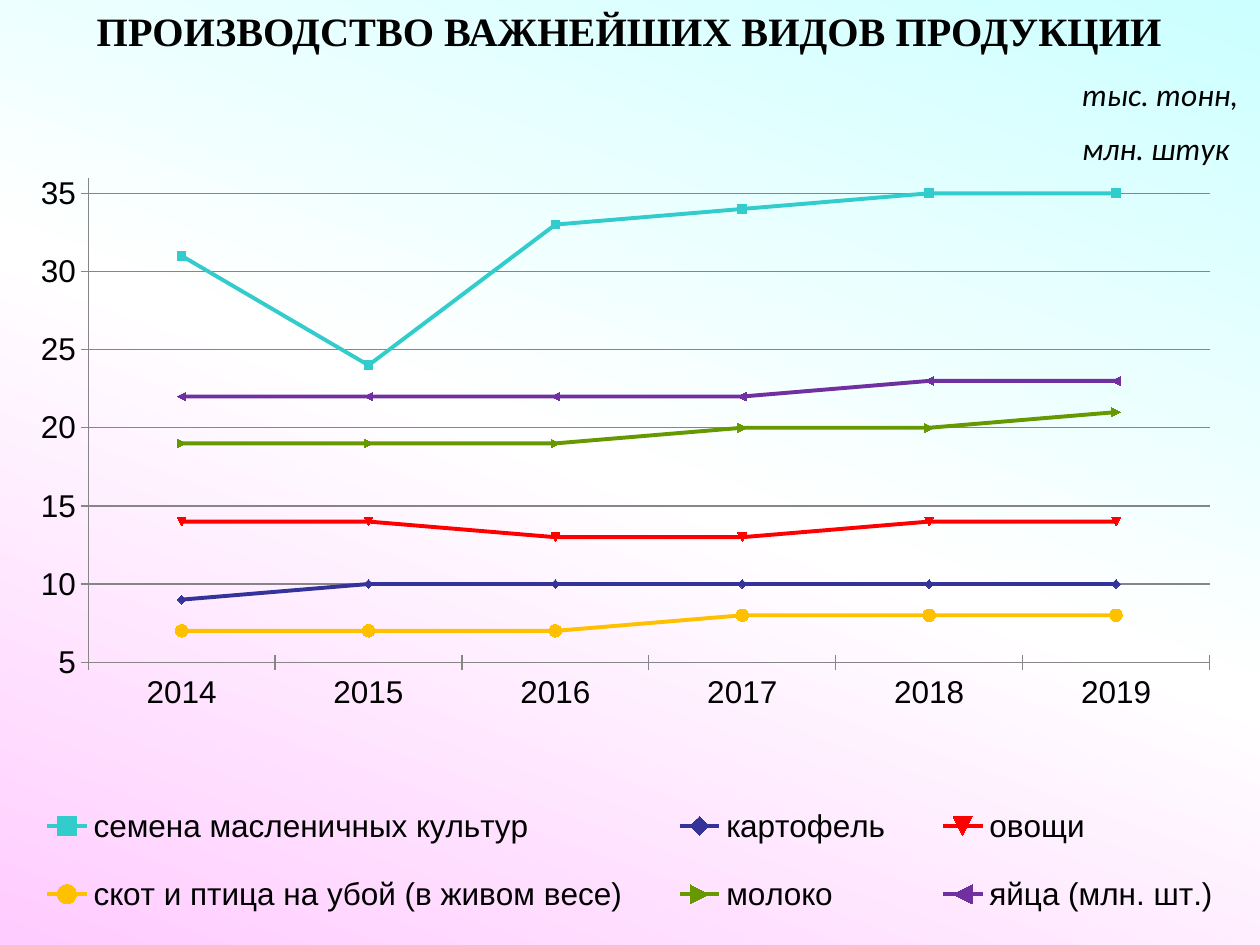
from copy import deepcopy
from lxml.etree import SubElement
from pptx import Presentation
from pptx.chart.data import CategoryChartData
from pptx.dml.color import RGBColor
from pptx.enum.chart import XL_CHART_TYPE, XL_LEGEND_POSITION, XL_MARKER_STYLE, XL_TICK_MARK
from pptx.enum.text import PP_ALIGN
from pptx.oxml.ns import qn
from pptx.util import Inches, Pt


def hue(code):
    return RGBColor.from_string(code)


def place(node, index, box, inner):
    for old in node.findall(qn("c:layout")):
        node.remove(old)
    layout = SubElement(node, qn("c:layout"))
    node.insert(index, layout)
    manual = SubElement(layout, qn("c:manualLayout"))
    pairs = [("layoutTarget", "inner")] if inner else []
    pairs += [("xMode", "edge"), ("yMode", "edge"), *zip("xywh", box)]
    for tag, val in pairs:
        SubElement(manual, qn("c:" + tag)).set("val", str(val))


deck = Presentation()
deck.slide_width, deck.slide_height = Inches(10), Inches(7.5)
wide, high = deck.slide_width, deck.slide_height
slide = deck.slides.add_slide(deck.slide_layouts[6])

fill = slide.background.fill
fill.gradient()
fill.gradient_angle = 250
stops = next(slide.element.iter(qn("a:gsLst")))
stops.insert(1, deepcopy(stops[0]))
for stop, code, share in zip(fill.gradient_stops, ["CCFFFF", "FFFFFF", "FFCCFF"], [0, 0.5, 1]):
    stop.color.rgb = hue(code)
    stop.position = share

texts = [
    (["ПРОИЗВОДСТВО ВАЖНЕЙШИХ ВИДОВ ПРОДУКЦИИ"], (0, 0, 1, 0.62 / 7.5), PP_ALIGN.CENTER, 0,
     {"name": "Times New Roman", "size": Pt(23), "bold": True}),
    (["тыс. тонн,", "млн. штук"], (8.49 / 10, 0.55 / 7.5, 1.51 / 10, 0.86 / 7.5), PP_ALIGN.LEFT, 9,
     {"name": "Calibri", "size": Pt(18), "italic": True}),
]
for lines, (x, y, w, h), align, gap, style in texts:
    frame = slide.shapes.add_textbox(
        int(x * wide), int(y * high), int(w * wide), int(h * high)).text_frame
    frame.word_wrap = True
    frame.text = "\n".join(lines)
    for para in frame.paragraphs:
        para.alignment = align
        para.space_before = Pt(gap)
        font = para.runs[0].font
        font.color.rgb = hue("000000")
        for key, val in style.items():
            setattr(font, key, val)

goods = [
    ("семена масленичных культур", "33CCCC", [31, 24, 33, 34, 35, 35]),
    ("картофель", "333399", [9, 10, 10, 10, 10, 10]),
    ("овощи", "FF0000", [14, 14, 13, 13, 14, 14]),
    ("скот и птица на убой (в живом весе)", "FFC000", [7, 7, 7, 8, 8, 8]),
    ("молоко", "669900", [19, 19, 19, 20, 20, 21]),
    ("яйца (млн. шт.)", "7030A0", [22, 22, 22, 22, 23, 23]),
]
data = CategoryChartData()
data.categories = [str(year) for year in range(2014, 2020)]
for name, code, vals in goods:
    data.add_series(name, vals)
top = Inches(1.09)
chart = slide.shapes.add_chart(
    XL_CHART_TYPE.LINE_MARKERS, 0, top, wide, high - top, data).chart
chart.has_title = False
chart.font.color.rgb = hue("000000")
for key, val in {"name": "Arial", "size": Pt(18)}.items():
    setattr(chart.font, key, val)
chart.plots[0].vary_by_categories = False

for line, (name, code, vals) in zip(chart.plots[0].series, goods):
    line.smooth = False
    line.format.line.width = Pt(2.25)
    line.format.line.color.rgb = hue(code)
    mark = line.marker
    ring = name.startswith("скот")
    mark.style = XL_MARKER_STYLE.CIRCLE if ring else XL_MARKER_STYLE.AUTOMATIC
    mark.size = 7 if ring else 5
    mark.format.fill.solid()
    mark.format.fill.fore_color.rgb = hue(code)
    mark.format.line.color.rgb = hue(code)

scale = chart.value_axis
for key, val in {"minimum_scale": 5, "maximum_scale": 36, "major_unit": 5,
                 "has_major_gridlines": True}.items():
    setattr(scale, key, val)
scale.tick_labels.number_format = "0"
scale.tick_labels.number_format_is_linked = False
for axis in (scale, chart.category_axis):
    axis.major_tick_mark = XL_TICK_MARK.CROSS
for part in (scale, chart.category_axis, scale.major_gridlines):
    part.format.line.width = Pt(0.75)
    part.format.line.color.rgb = hue("868686")

chart.has_legend = True
chart.legend.position = XL_LEGEND_POSITION.RIGHT
chart.legend.include_in_layout = False
area = next(chart.element.iter(qn("c:plotArea")))
key = next(chart.element.iter(qn("c:legend")))
place(area, 0, (0.07, 0.05, 0.89, 0.6), True)
place(key, 1, (0, 0.79, 1, 0.21), False)

deck.save("out.pptx")
